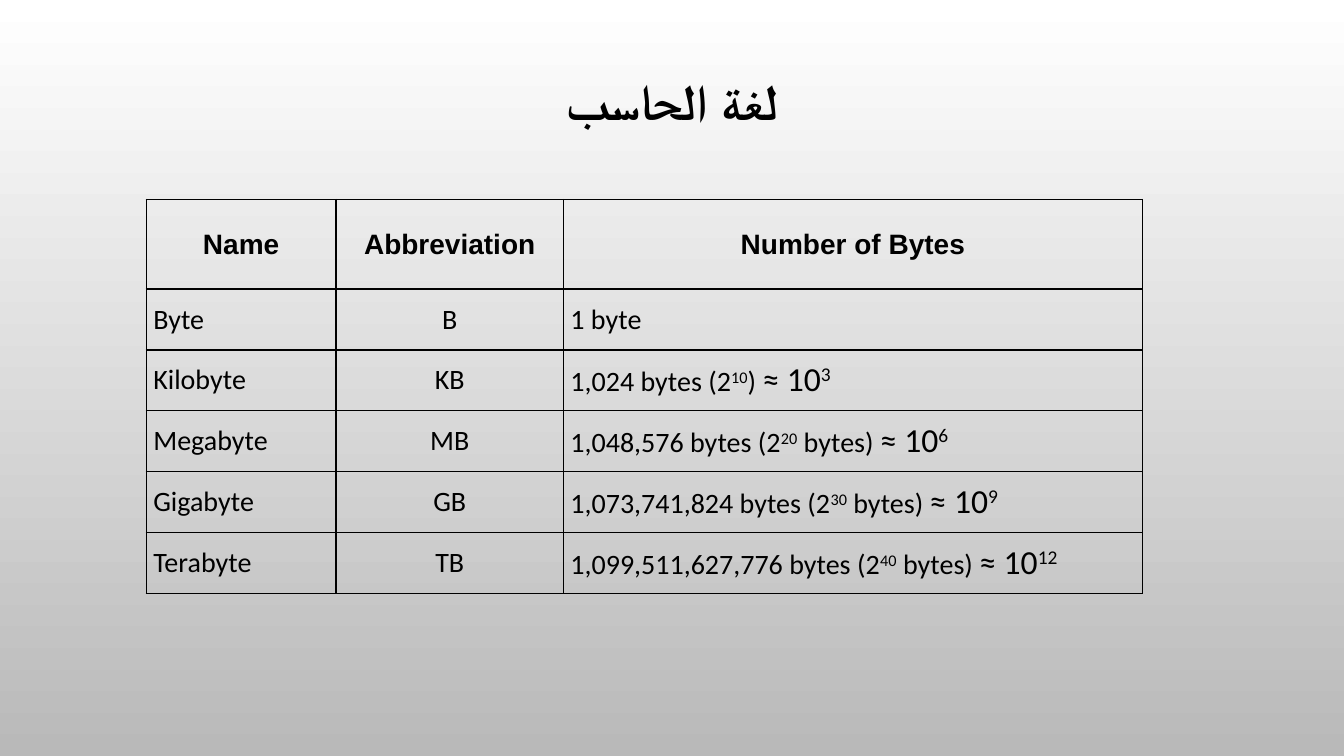
from dataclasses import dataclass

from lxml.etree import SubElement
from pptx import Presentation
from pptx.dml.color import RGBColor
from pptx.enum.text import MSO_ANCHOR, PP_ALIGN
from pptx.oxml.ns import qn
from pptx.util import Pt


@dataclass(frozen=True)
class Theme:
    """Colours, fonts and type sizes of the slide."""
    ink: str = "000000"
    top: str = "FFFFFF"
    bottom: str = "B9B9B9"
    heading_font: str = "Arial"
    body_font: str = "Calibri"
    title_size: int = 36
    table_size: int = 20
    power_size: int = 24
    rule_width: int = 1


THEME = Theme()
TITLE = {"name": THEME.body_font, "size": Pt(THEME.title_size), "bold": True}
HEADING = {"name": THEME.heading_font, "size": Pt(THEME.table_size), "bold": True}
BODY = {"name": THEME.body_font, "size": Pt(THEME.table_size), "bold": False}
POWER = BODY | {"size": Pt(THEME.power_size)}

COLUMN_WIDTHS = (135.5, 162.5, 413.5)
HEADER_HEIGHT, ROW_HEIGHT = 64, 43.5
HEADINGS = ("Name", "Abbreviation", "Number of Bytes")
UNITS = (
    ("Kilobyte", "KB", "1,024", "10", ") ", "3"),
    ("Megabyte", "MB", "1,048,576", "20", " bytes) ", "6"),
    ("Gigabyte", "GB", "1,073,741,824", "30", " bytes) ", "9"),
    ("Terabyte", "TB", "1,099,511,627,776", "40", " bytes) ", "12"),
)


def set_all(target, values):
    """Set every named value on the target."""
    for name, value in values.items():
        setattr(target, name, value)


def add_span(para, text, style, raised=False):
    """Add one styled run, raised when it is an exponent."""
    span = para.add_run()
    span.text = text
    set_all(span.font, style)
    span.font.color.rgb = RGBColor.from_string(THEME.ink)
    if raised:
        span.font._element.set("baseline", "30000")


def add_borders(cell):
    """Rule all four sides of a cell."""
    properties = cell._tc.get_or_add_tcPr()
    for side in ("lnL", "lnR", "lnT", "lnB"):
        line = SubElement(properties, qn(f"a:{side}"), w=str(Pt(THEME.rule_width)))
        fill = SubElement(line, qn("a:solidFill"))
        SubElement(fill, qn("a:srgbClr"), val=THEME.ink)


def fill_cell(cell, spans, alignment):
    """Format a cell and write its runs."""
    set_all(cell, {
        "vertical_anchor": MSO_ANCHOR.MIDDLE,
        "margin_left": Pt(5), "margin_right": Pt(5),
        "margin_top": 0, "margin_bottom": 0,
    })
    add_borders(cell)
    cell.fill.background()
    para = cell.text_frame.paragraphs[0]
    para.alignment = alignment
    for span in spans:
        add_span(para, *span)


def table_rows():
    """Return the runs of every cell, row by row."""
    rows = [[[(text, HEADING)] for text in HEADINGS],
            [[(text, BODY)] for text in ("Byte", "B", "1 byte")]]
    for name, short, count, binary, ending, decimal in UNITS:
        size = [(f"{count} bytes (2", BODY), (binary, BODY, True), (ending, BODY),
                ("≈ 10", POWER), (decimal, POWER, True)]
        rows.append([[(name, BODY)], [(short, BODY)], size])
    return rows


def add_background(page):
    """Shade the page from top to bottom."""
    fill = page.background.fill
    fill.gradient()
    fill.gradient_angle = 270
    for stop, colour in zip(fill.gradient_stops, (THEME.top, THEME.bottom)):
        stop.color.rgb = RGBColor.from_string(colour)


def add_title(page, left, top, width, height):
    """Place the centred title in its box."""
    box = page.shapes.add_textbox(Pt(left), Pt(top), Pt(width), Pt(height))
    set_all(box.text_frame, {"word_wrap": True, "vertical_anchor": MSO_ANCHOR.MIDDLE})
    para = box.text_frame.paragraphs[0]
    set_all(para, {"alignment": PP_ALIGN.CENTER, "line_spacing": 0.9})
    add_span(para, "لغة الحاسب", TITLE)


def add_units_table(page, left, top):
    """Place the table of byte units from its top left corner."""
    rows = table_rows()
    heights = [HEADER_HEIGHT] + [ROW_HEIGHT] * (len(rows) - 1)
    table = page.shapes.add_table(
        len(rows), len(COLUMN_WIDTHS), Pt(left), Pt(top),
        Pt(sum(COLUMN_WIDTHS)), Pt(sum(heights))).table
    set_all(table, {"first_row": False, "horz_banding": False})
    for column, width in zip(table.columns, COLUMN_WIDTHS):
        column.width = Pt(width)
    for row, height in zip(table.rows, heights):
        row.height = Pt(height)
    for row_index, cells in enumerate(rows):
        for column_index, spans in enumerate(cells):
            centred = row_index == 0 or column_index == 1
            fill_cell(table.cell(row_index, column_index), spans,
                      PP_ALIGN.CENTER if centred else PP_ALIGN.LEFT)


def main():
    """Build and save the deck."""
    deck = Presentation()
    set_all(deck, {"slide_width": Pt(960), "slide_height": Pt(540)})
    page = deck.slides.add_slide(deck.slide_layouts[6])
    add_background(page)
    add_title(page, 72, 25, 816, 99.5)
    add_units_table(page, 104.5, 142.5)
    deck.save("out.pptx")


if __name__ == "__main__":
    main()
